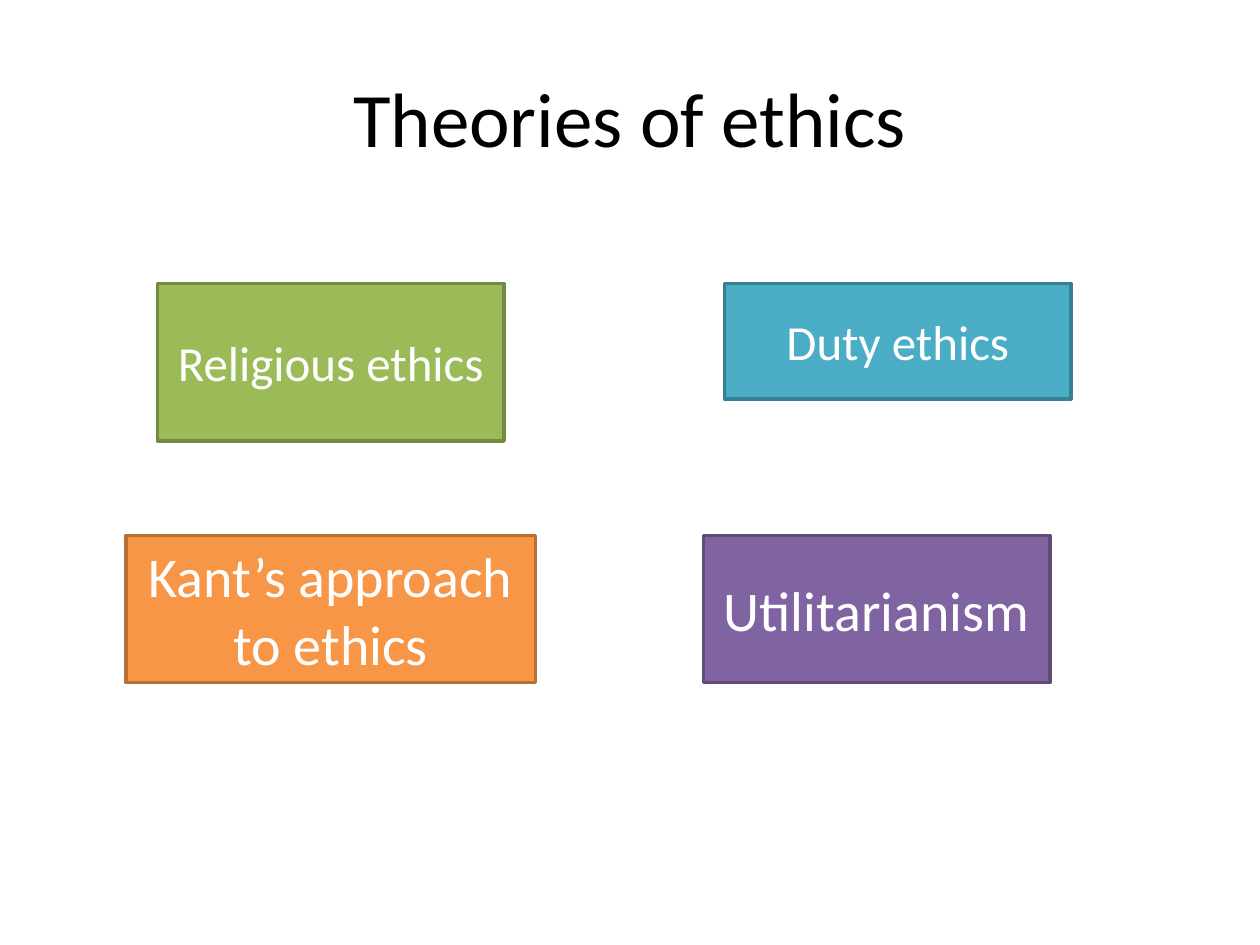
from pptx import Presentation
from pptx.dml.color import RGBColor
from pptx.enum.shapes import MSO_SHAPE
from pptx.enum.text import MSO_ANCHOR, PP_ALIGN
from pptx.util import Inches, Pt

COLUMNS, ROWS = 120, 90
WIDTH, HEIGHT = Inches(10), Inches(7.5)
TITLE_BOX = (6, 3.6, 108, 15)
THEORIES_BOX = (12, 27, 90, 38)

THEORIES = [
    ("Religious ethics", (3, 0, 33, 15), "9BBB59", "738A42", 28),
    ("Duty ethics", (57, 0, 33, 11), "4BACC6", "377F92", 28),
    ("Kant’s approach to ethics", (0, 24, 39, 14), "F79646", "B76F34", 32),
    ("Utilitarianism", (55, 24, 33, 14), "8064A2", "5F4A78", 32),
]


def color(value):
    return RGBColor.from_string(value)


def place(box):
    left, top, width, height = box
    return (
        round(WIDTH * left / COLUMNS),
        round(HEIGHT * top / ROWS),
        round(WIDTH * width / COLUMNS),
        round(HEIGHT * height / ROWS),
    )


def write(frame, wording, size, ink):
    frame.word_wrap = True
    frame.vertical_anchor = MSO_ANCHOR.MIDDLE
    paragraph = frame.paragraphs[0]
    paragraph.alignment = PP_ALIGN.CENTER
    run = paragraph.add_run()
    run.text = wording
    run.font.name = "Calibri"
    run.font.size = Pt(size)
    run.font.color.rgb = color(ink)


def add_title(slide, box):
    title = slide.shapes.add_textbox(*place(box))
    write(title.text_frame, "Theories of ethics", 44, "000000")


def add_theories(slide, box):
    left, top = box[:2]
    for wording, (column, row, width, height), fill, outline, size in THEORIES:
        theory = slide.shapes.add_shape(
            MSO_SHAPE.RECTANGLE, *place((left + column, top + row, width, height))
        )
        theory.shadow.inherit = False
        theory.fill.solid()
        theory.fill.fore_color.rgb = color(fill)
        theory.line.color.rgb = color(outline)
        theory.line.width = Pt(2)
        write(theory.text_frame, wording, size, "FFFFFF")


def main():
    deck = Presentation()
    deck.slide_width, deck.slide_height = WIDTH, HEIGHT
    slide = deck.slides.add_slide(deck.slide_layouts[6])
    add_title(slide, TITLE_BOX)
    add_theories(slide, THEORIES_BOX)
    deck.save("out.pptx")


if __name__ == "__main__":
    main()
